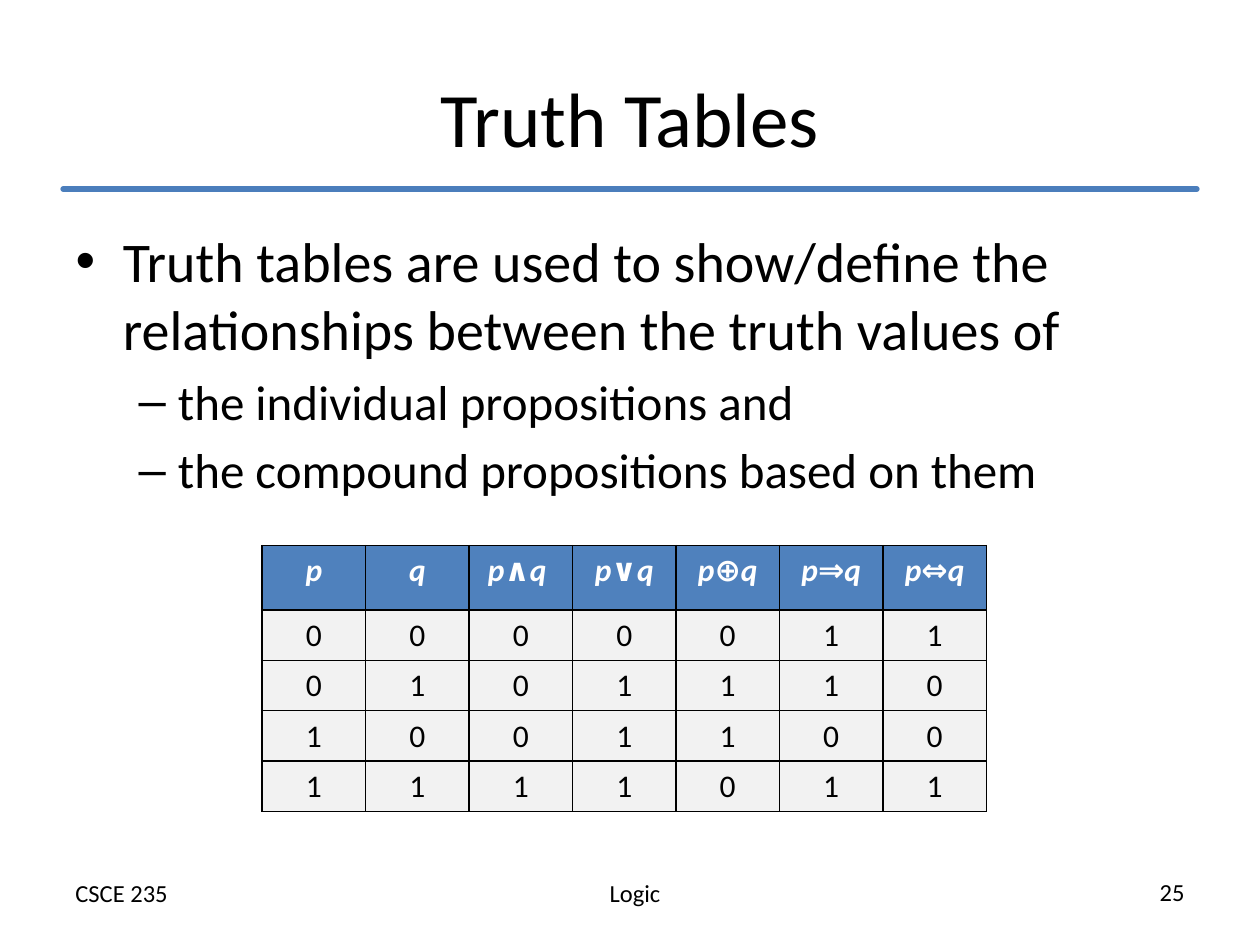
from lxml import etree
from pptx import Presentation
from pptx.dml.color import RGBColor
from pptx.enum import shapes, text
from pptx.oxml import ns
from pptx.util import Inches, Pt


def style(paragraph, size, color="000000", align=None):
    paragraph.font.name = "Calibri"
    paragraph.font.size = Pt(size)
    paragraph.font.color.rgb = RGBColor.from_string(color)
    paragraph.alignment = align


def add_border(cell, side):
    line = etree.SubElement(cell._tc.get_or_add_tcPr(), ns.qn(f"a:{side}"), w=str(Pt(1)))
    fill = etree.SubElement(line, ns.qn("a:solidFill"))
    etree.SubElement(fill, ns.qn("a:srgbClr"), val="000000")


LEFT, CENTER, RIGHT = text.PP_ALIGN.LEFT, text.PP_ALIGN.CENTER, text.PP_ALIGN.RIGHT

prs = Presentation()
prs.slide_width, prs.slide_height = Inches(10), Inches(7.5)
slide = prs.slides.add_slide(prs.slide_layouts[1])

footers = [
    ("Logic", 3.58, 6.92, CENTER),
    ("CSCE 235", 0.5, 6.92, LEFT),
    ("25", 6.58, 6.91, RIGHT),
]
for words, left, top, align in footers:
    footer = slide.shapes.add_textbox(Inches(left), Inches(top), Inches(2.92), Inches(0.34))
    footer.text_frame.word_wrap = True
    footer.text_frame.text = words
    style(footer.text_frame.paragraphs[0], 14, align=align)

title_rule = slide.shapes.add_connector(
    shapes.MSO_CONNECTOR.STRAIGHT, Inches(0.5), Inches(1.5), Inches(9.5), Inches(1.5)
)
title_rule.line.color.rgb = RGBColor.from_string("4B7EBC")
title_rule.line.width = Pt(3)
title_rule.line._get_or_add_ln().set("cap", "rnd")
etree.SubElement(title_rule._element.spPr, ns.qn("a:effectLst"))

title = slide.shapes.title
title.left, title.top, title.width, title.height = Inches(0.5), Inches(0.3), Inches(9), Inches(1.25)
title.text_frame.text = "Truth Tables"
style(title.text_frame.paragraphs[0], 44, align=CENTER)

body = slide.placeholders[1]
body.left, body.top, body.width, body.height = Inches(0.5), Inches(1.75), Inches(9), Inches(4.95)
points = [
    ("Truth tables are used to show/define the relationships between the truth values of", 0, 32),
    ("the individual propositions and", 1, 28),
    ("the compound propositions based on them", 1, 28),
]
body.text_frame.text = "\n".join(words for words, level, size in points)
for paragraph, (words, level, size) in zip(body.text_frame.paragraphs, points):
    paragraph.level = level
    style(paragraph, size)

formulas = ["p", "q", "p∧q ", "p∨q", "p⊕q", "p⇒q", "p⇔q"]
truth_rows = ["0000011", "0101110", "1001100", "1111011"]
truth_table = slide.shapes.add_table(
    5, 7, Inches(2.08), Inches(4.33), Inches(5.75), Inches(2.11)
).table
for row, height in zip(truth_table.rows, [0.51, 0.4, 0.4, 0.4, 0.4]):
    row.height = Inches(height)

for r, values in enumerate([formulas, *truth_rows]):
    for c, value in enumerate(values):
        cell = truth_table.cell(r, c)
        paragraph = cell.text_frame.paragraphs[0]
        is_header = r == 0
        parts = [value[:1], value[1:2], value[2:]] if len(value) > 1 else [value]
        for part in parts:
            run = paragraph.add_run()
            run.text = part
            run.font.italic = is_header and part not in "∧∨⊕⇒"
        style(paragraph, 18, "FFFFFF" if is_header else "000000", CENTER)
        paragraph.font.bold = is_header
        for side in ("lnL", "lnR", "lnT", "lnB"):
            add_border(cell, side)
        cell.fill.solid()
        cell.fill.fore_color.rgb = RGBColor.from_string("4F81BD" if is_header else "F2F2F2")

prs.save("out.pptx")
